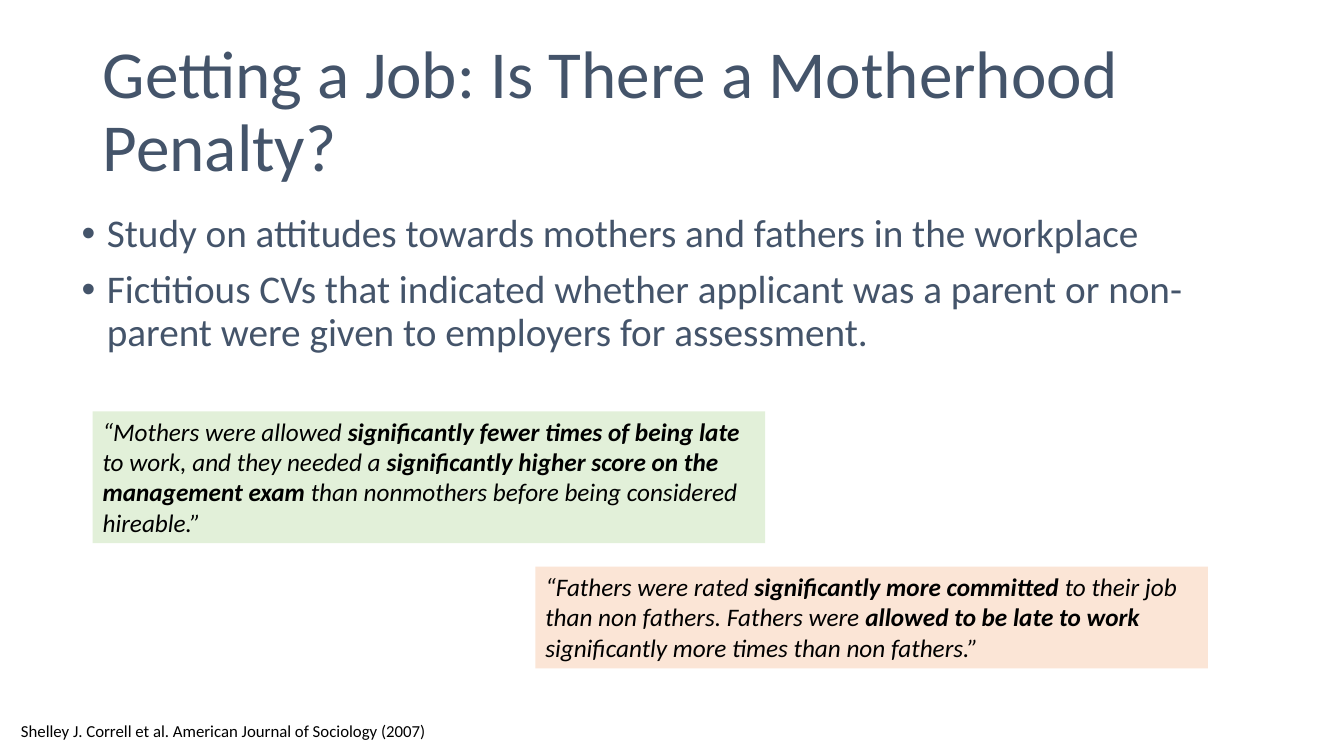
import pptx
import pptx.dml.color
import pptx.enum.text
import pptx.util
from pptx.util import Inches

COLORS = {
    "heading": "44546A",
    "text": "000000",
    "mothers": "E2F0D9",
    "fathers": "FBE5D6",
}


def add_run(paragraph, text, size, color, bold=False, italic=False):
    run = paragraph.add_run()
    run.text = text
    run.font.name = "Calibri"
    run.font.size = pptx.util.Pt(size)
    run.font.bold = bold
    run.font.italic = italic
    run.font.color.rgb = pptx.dml.color.RGBColor.from_string(COLORS[color])


def place(shape, left, top, width, height):
    """Move and size a shape, in inches, and let its text wrap."""
    shape.left, shape.top = Inches(left), Inches(top)
    shape.width, shape.height = Inches(width), Inches(height)
    shape.text_frame.word_wrap = True
    shape.text_frame.auto_size = pptx.enum.text.MSO_AUTO_SIZE.NONE


presentation = pptx.Presentation()
presentation.slide_width = Inches(13.33)
presentation.slide_height = Inches(7.5)
slide = presentation.slides.add_slide(presentation.slide_layouts[1])

# Title
title = slide.shapes.title
place(title, 0.92, 0.4, 11.5, 1.45)
title.text_frame.vertical_anchor = pptx.enum.text.MSO_ANCHOR.MIDDLE
paragraph = title.text_frame.paragraphs[0]
paragraph.alignment = pptx.enum.text.PP_ALIGN.LEFT
paragraph.line_spacing = 0.9
add_run(paragraph, "Getting a Job: Is There a Motherhood Penalty?", 48, "heading")

# Bullet list
body = slide.placeholders[1]
place(body, 0.71, 2.07, 11.5, 4.76)
points = [
    "Study on attitudes towards mothers and fathers in the workplace",
    "Fictitious CVs that indicated whether applicant was a parent or "
    "non-parent were given to employers for assessment.",
]
for index, point in enumerate(points):
    paragraph = body.text_frame.add_paragraph() if index else body.text_frame.paragraphs[0]
    paragraph.line_spacing = 0.9
    paragraph.space_before = pptx.util.Pt(10)
    properties = paragraph._p.get_or_add_pPr()
    properties.set("marL", str(Inches(0.25)))
    properties.set("indent", str(Inches(-0.25)))
    add_run(paragraph, point, 28, "heading")

# Quotes: plain and bold runs alternate, starting with plain
quotes = [
    ("mothers", 0.92, 4.08, 1.31, [
        "“Mothers were allowed ",
        "significantly fewer times of being late",
        " to work, and they needed a ",
        "significantly higher score on the management exam ",
        "than nonmothers before being considered hireable.”",
    ]),
    ("fathers", 5.31, 5.62, 1.01, [
        "“Fathers were rated ",
        "significantly more committed ",
        "to their job than non fathers. Fathers were ",
        "allowed to be late to work ",
        "significantly more times than non fathers.”",
    ]),
]
for fill, left, top, height, parts in quotes:
    quote = slide.shapes.add_textbox(0, 0, 0, 0)
    place(quote, left, top, 6.67, height)
    quote.fill.solid()
    quote.fill.fore_color.rgb = pptx.dml.color.RGBColor.from_string(COLORS[fill])
    for index, part in enumerate(parts):
        add_run(quote.text_frame.paragraphs[0], part, 18, "text",
                bold=index % 2 == 1, italic=True)

# Source
citation = slide.shapes.add_textbox(0, 0, 0, 0)
place(citation, 0.11, 7.1, 6.67, 0.3)
add_run(citation.text_frame.paragraphs[0],
        "Shelley J. Correll et al. American Journal of Sociology (2007)", 12, "text")

presentation.save("out.pptx")
